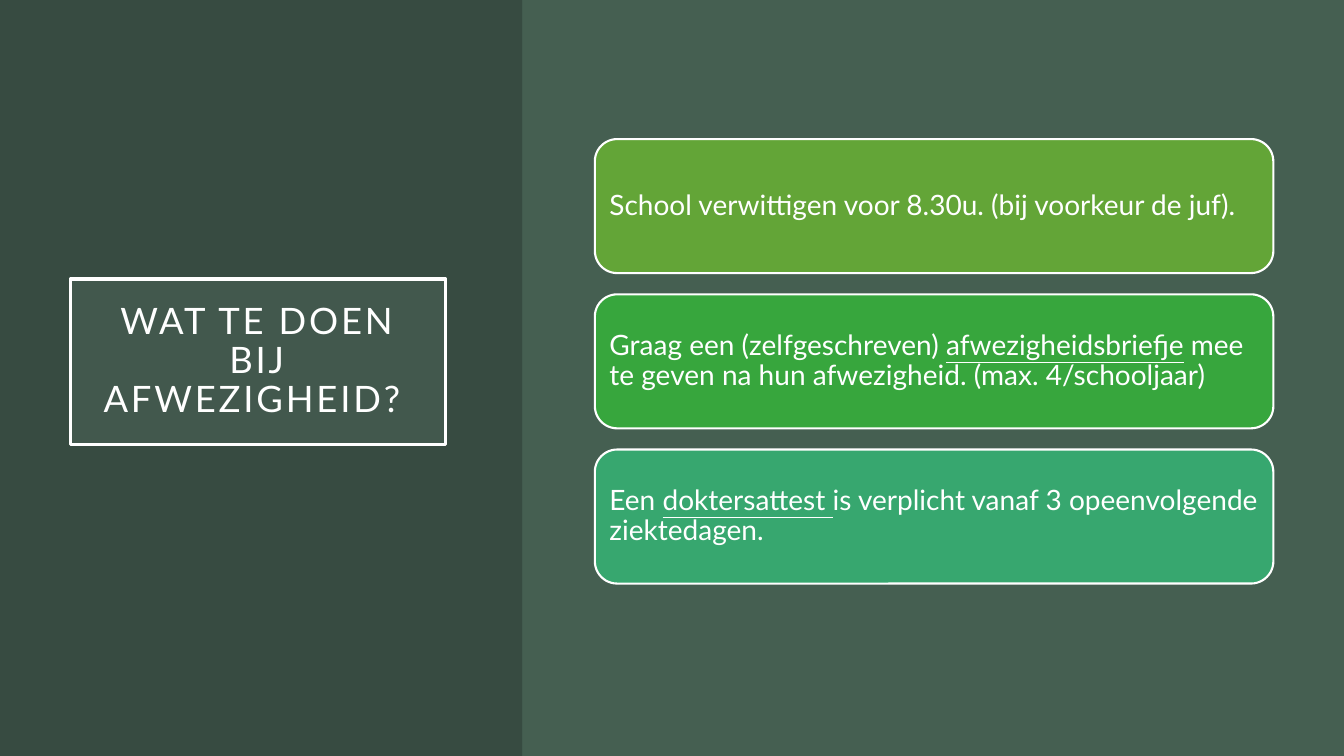
from dataclasses import dataclass

from lxml import etree
from pptx import Presentation
from pptx.dml.color import RGBColor
from pptx.enum import shapes, text
from pptx.oxml import ns
from pptx.util import Inches, Pt


@dataclass(frozen=True)
class Theme:
    font: str = "Lato"
    background: str = "455F51"
    side_panel: str = "34473D"
    title_fill: str = "87A896"
    white: str = "FFFFFF"
    cards: tuple = ("63A537", "37A63D", "37A76F")
    title_size: int = 26
    card_size: int = 20


THEME = Theme()
TITLE = "WAT TE DOEN BIJ AFWEZIGHEID? "
# Each card is a list of (wording, underlined) runs.
CARDS = [
    [("School verwittigen voor 8.30u. (bij voorkeur de juf).", False)],
    [("Graag een (zelfgeschreven) ", False), ("afwezigheidsbriefje", True),
     (" mee te geven na hun afwezigheid. (max. 4/schooljaar)", False)],
    [("Een ", False), ("doktersattest ", True),
     ("is verplicht vanaf 3 opeenvolgende ziektedagen.", False)],
]


def add_box(slide, kind, box, fill, opacity=100, line_width=0):
    """Add a filled shape; box is left, top, width, height in inches."""
    shape = slide.shapes.add_shape(kind, *map(Inches, box))
    shape.shadow.inherit = False
    shape.fill.solid()
    shape.fill.fore_color.rgb = RGBColor.from_string(fill)
    if opacity < 100:
        color = shape.fill._xPr.find(ns.qn("a:solidFill"))[0]
        etree.SubElement(color, ns.qn("a:alpha"), val=str(opacity * 1000))
    if line_width:
        shape.line.color.rgb = RGBColor.from_string(THEME.white)
        shape.line.width = Pt(line_width)
    else:
        shape.line.fill.background()
    return shape


def write_text(shape, runs, size, alignment, margin):
    frame = shape.text_frame
    frame.word_wrap = True
    frame.vertical_anchor = text.MSO_ANCHOR.MIDDLE
    frame.margin_left = frame.margin_right = Inches(margin)
    frame.margin_top = frame.margin_bottom = Inches(margin)
    paragraph = frame.paragraphs[0]
    paragraph.alignment = alignment
    paragraph.line_spacing = 0.9
    paragraph.font.name = THEME.font
    paragraph.font.size = Pt(size)
    paragraph.font.color.rgb = RGBColor.from_string(THEME.white)
    for wording, underlined in runs:
        run = paragraph.add_run()
        run.text = wording
        if underlined:
            run.font.underline = True
    return paragraph


def add_title_panel(slide, box):
    left, top, width, height = box
    rectangle = shapes.MSO_SHAPE.RECTANGLE
    add_box(slide, rectangle, box, THEME.side_panel, opacity=80)
    title_box = (left + 0.7, top + 2.77, width - 1.46, 1.64)
    title = add_box(slide, rectangle, title_box, THEME.title_fill, 15, 2.5)
    paragraph = write_text(title, [(TITLE, False)], THEME.title_size,
                           text.PP_ALIGN.CENTER, 0.2)
    letter_spacing = Pt(2).pt * 100
    paragraph.runs[0].font._element.set("spc", str(int(letter_spacing)))


def add_cards(slide, box, card_height=1.33):
    """Spread the cards evenly over the height of the box."""
    left, top, width, height = box
    step = (height - card_height) / (len(CARDS) - 1)
    for index, (runs, fill) in enumerate(zip(CARDS, THEME.cards)):
        card_box = (left, top + index * step, width, card_height)
        card = add_box(slide, shapes.MSO_SHAPE.ROUNDED_RECTANGLE, card_box,
                       fill, line_width=1.5)
        write_text(card, runs, THEME.card_size, text.PP_ALIGN.LEFT, 0.08)


def main():
    presentation = Presentation()
    presentation.slide_width = Inches(13.33)
    presentation.slide_height = Inches(7.5)
    slide = presentation.slides.add_slide(presentation.slide_layouts[6])
    slide.background.fill.solid()
    slide.background.fill.fore_color.rgb = RGBColor.from_string(THEME.background)
    add_title_panel(slide, (0, 0, 5.18, 7.5))
    add_box(slide, shapes.MSO_SHAPE.RECTANGLE, (5.2, 0, 8.13, 7.5),
            THEME.background)
    add_cards(slide, (5.9, 1.38, 6.73, 4.41))
    presentation.save("out.pptx")


if __name__ == "__main__":
    main()
